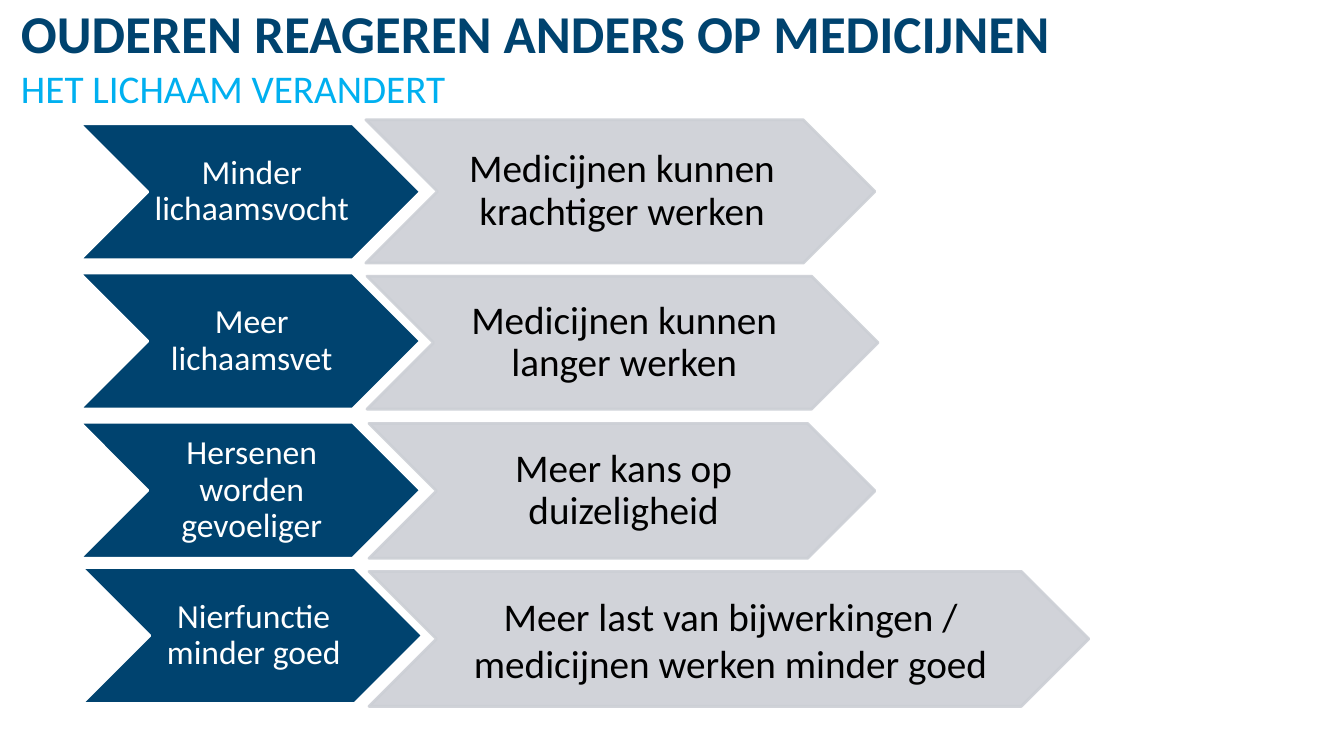
from lxml.etree import SubElement
from pptx import Presentation
from pptx.dml.color import RGBColor
from pptx.enum.shapes import MSO_SHAPE
from pptx.enum.text import MSO_ANCHOR, PP_ALIGN
from pptx.oxml.ns import qn
from pptx.util import Cm, Pt

NAVY = RGBColor(0x00, 0x43, 0x6F)
SKY = RGBColor(0x00, 0xB0, 0xF0)
GREY = RGBColor(0xCC, 0xCF, 0xD5)
WHITE = RGBColor(0xFF, 0xFF, 0xFF)
BLACK = RGBColor(0x00, 0x00, 0x00)
FONT = "Calibri"

presentation = Presentation()
presentation.slide_width = Cm(33.87)
presentation.slide_height = Cm(19.05)
slide = presentation.slides.add_slide(presentation.slide_layouts[6])


def style_run(run, size, color, bold=False):
    run.font.name = FONT
    run.font.size = Pt(size)
    run.font.color.rgb = color
    run.font.bold = bold


def add_chevron(box, text, size, fill, line, text_color, spacing=0.9, opacity=100):
    shape = slide.shapes.add_shape(MSO_SHAPE.CHEVRON, *[Cm(length) for length in box])
    shape.shadow.inherit = False
    shape.fill.solid()
    shape.fill.fore_color.rgb = fill
    shape.line.color.rgb = line
    shape.line.width = Pt(2)
    if opacity < 100:
        for color in shape._element.spPr.iter(qn("a:srgbClr")):
            SubElement(color, qn("a:alpha"), val=str(opacity * 1000))
    frame = shape.text_frame
    frame.word_wrap = True
    frame.vertical_anchor = MSO_ANCHOR.MIDDLE
    frame.margin_left = Cm(0.08)
    frame.margin_right = 0
    frame.margin_top = frame.margin_bottom = Cm(0.05)
    frame.text = text
    paragraph = frame.paragraphs[0]
    paragraph.alignment = PP_ALIGN.CENTER
    paragraph.line_spacing = spacing
    style_run(paragraph.runs[0], size, text_color)


# Title and subtitle
title = slide.shapes.add_textbox(Cm(0.53), 0, Cm(32.18), Cm(2.82))
frame = title.text_frame
frame.word_wrap = True
frame.margin_left = frame.margin_right = frame.margin_top = frame.margin_bottom = 0
paragraph = frame.paragraphs[0]
paragraph.text = "OUDEREN REAGEREN ANDERS OP MEDICIJNEN\vHET LICHAAM VERANDERT"
heading, subheading = paragraph.runs
style_run(heading, 38, NAVY, bold=True)
style_run(subheading, 28, SKY)

# Each change: text, left, top; each effect: text, box, line spacing
rows = [
    ("Minder lichaamsvocht", 2.01, 3.12,
     "Medicijnen kunnen krachtiger werken", (9.22, 3.02, 12.83, 3.61), 0.9),
    ("Meer lichaamsvet", 2.01, 6.88,
     "Medicijnen kunnen langer werken", (9.25, 6.96, 12.88, 3.35), 0.9),
    ("Hersenen worden gevoeliger", 2.01, 10.64,
     "Meer kans op duizeligheid", (9.3, 10.67, 12.75, 3.4), 0.9),
    ("Nierfunctie minder goed", 2.06, 14.3,
     "Meer last van bijwerkingen / medicijnen werken minder goed",
     (9.3, 14.4, 18.14, 3.4), 1.0),
]

# Chevron pairs
for change, left, top, effect, effect_box, spacing in rows:
    add_chevron((left, top, 8.59, 3.43), change, 24, NAVY, WHITE, WHITE)
    add_chevron(effect_box, effect, 28, GREY, GREY, BLACK, spacing, opacity=90)

presentation.save("out.pptx")
